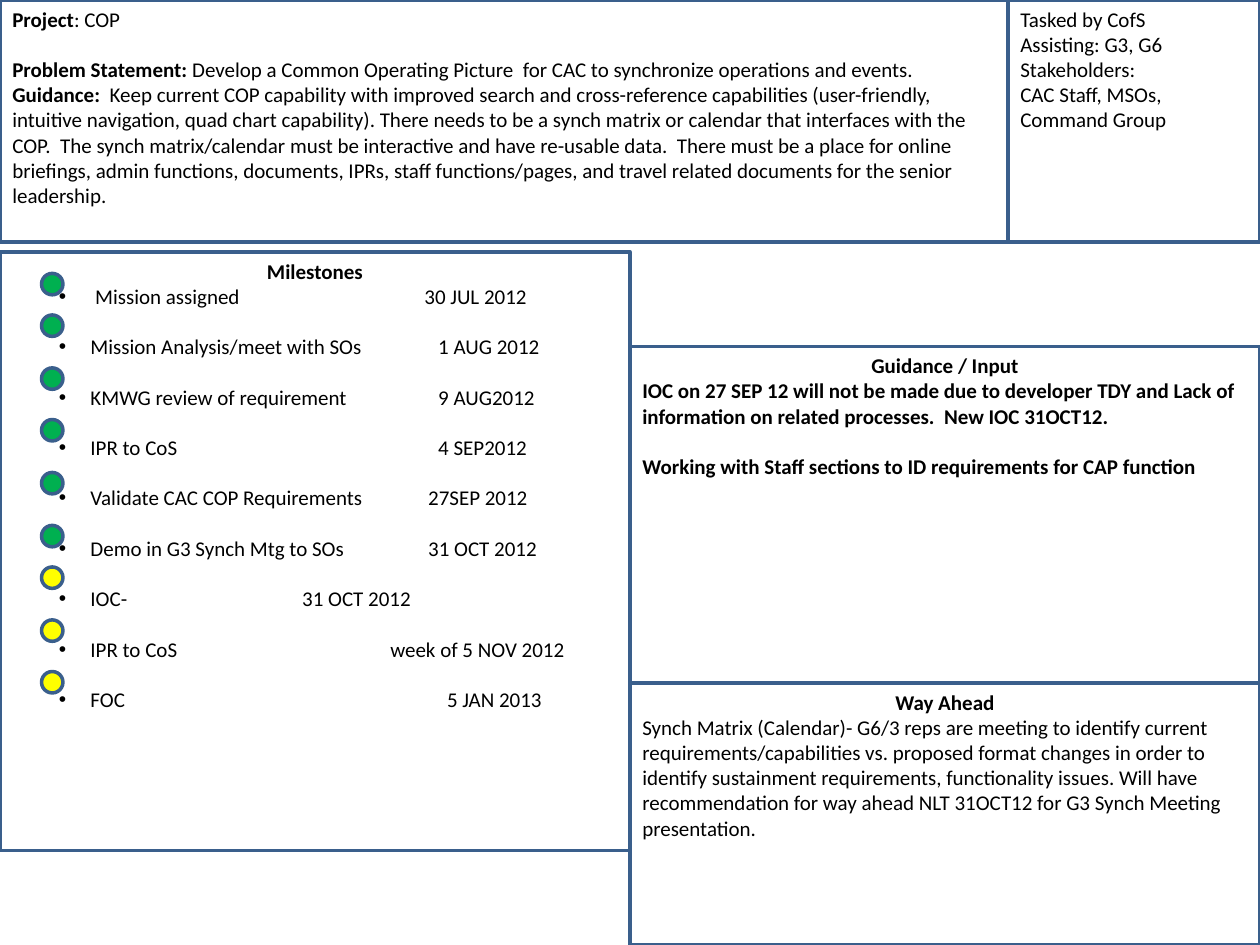
from lxml.etree import SubElement
from pptx import Presentation
from pptx.dml.color import RGBColor
from pptx.enum.shapes import MSO_SHAPE as Shape
from pptx.enum.text import MSO_ANCHOR as Anchor, PP_ALIGN as Align
from pptx.oxml.ns import qn
from pptx.util import Inches, Pt

BLACK = RGBColor(0x00, 0x00, 0x00)
BLUE = RGBColor(0x3A, 0x5F, 0x8C)
GREEN = RGBColor(0x00, 0xB0, 0x50)
YELLOW = RGBColor(0xFF, 0xFF, 0x00)

FONT = {"name": "Calibri", "size": Pt(12)}
LINE_GAP = Pt(14.4)
STATUS_LEFT, STATUS_SIZE = 0.33, 0.17
BULLET_MARGIN, BULLET_HANG = 0.62, 0.25

PROJECT = [
    [("Project", True), (": COP", False)],
    [
        ("Problem Statement: ", True),
        ("Develop a Common Operating Picture  for CAC to synchronize "
         "operations and events.", False),
    ],
    [
        ("Guidance:  ", True),
        ("Keep current COP capability with improved search and cross-reference "
         "capabilities (user-friendly, intuitive navigation, quad chart capability). "
         "There needs to be a synch matrix or calendar that interfaces with the COP.  "
         "The synch matrix/calendar must be interactive and have re-usable data.  "
         "There must be a place for online briefings, admin functions, documents, IPRs, "
         "staff functions/pages, and travel related documents for the senior leadership.",
         False),
    ],
]
TASKING = [
    "Tasked by CofS",
    "Assisting: G3, G6",
    "Stakeholders:",
    "CAC Staff, MSOs, Command Group",
]
MILESTONES = [
    (" Mission assigned", "30 JUL 2012", 3.27, 2.17, GREEN),
    ("Mission Analysis/meet with SOs", "1 AUG 2012", 3.38, 2.5, GREEN),
    ("KMWG review of requirement", "9 AUG2012", 3.38, 2.92, GREEN),
    ("IPR to CoS", "4 SEP2012", 3.38, 3.33, GREEN),
    ("Validate CAC COP Requirements", "27SEP 2012", 3.3, 3.75, GREEN),
    ("Demo in G3 Synch Mtg to SOs", "31 OCT 2012", 3.3, 4.17, GREEN),
    ("IOC-", "31 OCT 2012", 2.3, 4.5, YELLOW),
    ("IPR to CoS", "week of 5 NOV 2012", 3.0, 4.92, YELLOW),
    ("FOC", "5 JAN 2013", 3.45, 5.33, YELLOW),
]
GUIDANCE = [
    "IOC on 27 SEP 12 will not be made due to developer TDY and Lack of information "
    "on related processes.  New IOC 31OCT12.",
    "Working with Staff sections to ID requirements for CAP function",
]
WAY_AHEAD = (
    "Synch Matrix (Calendar)- G6/3 reps are meeting to identify current "
    "requirements/capabilities vs. proposed format changes in order to identify "
    "sustainment requirements, functionality issues. Will have recommendation for way "
    "ahead NLT 31OCT12 for G3 Synch Meeting presentation."
)


def set_all(target, values):
    for name, value in values.items():
        setattr(target, name, value)


def add_outlined(page, kind, left, top, width, height):
    shape = page.shapes.add_shape(
        kind, Inches(left), Inches(top), Inches(width), Inches(height))
    shape.shadow.inherit = False
    shape.line.color.rgb = BLUE
    shape.line.width = Pt(2)
    return shape


def add_panel(page, left, top, width, height):
    panel = add_outlined(page, Shape.RECTANGLE, left, top, width, height)
    panel.fill.background()
    set_all(panel.text_frame, {"word_wrap": True, "vertical_anchor": Anchor.TOP})
    return panel.text_frame


def add_para(box, spans, align=Align.LEFT, gap=Pt(0)):
    first = box.paragraphs[0]
    para = box.add_paragraph() if first.runs else first
    set_all(para, {"alignment": align, "space_before": gap})
    for text, bold in spans:
        span = para.add_run()
        span.text = text
        set_all(span.font, {**FONT, "bold": bold})
        span.font.color.rgb = BLACK
    return para


def add_heading(box, text):
    add_para(box, [(text, True)], Align.CENTER)


def add_milestone(box, task, date, date_left, gap):
    para = add_para(box, [(f"{task}\t{date}", False)], gap=gap)
    props = para._p.get_or_add_pPr()
    props.set("marL", str(Inches(BULLET_MARGIN)))
    props.set("indent", str(-Inches(BULLET_HANG)))
    SubElement(props, qn("a:buFont"), typeface="Arial")
    SubElement(props, qn("a:buChar"), char="•")
    stops = SubElement(props, qn("a:tabLst"))
    SubElement(stops, qn("a:tab"), pos=str(Inches(date_left)), algn="l")


def add_status(page, top, color):
    status = add_outlined(
        page, Shape.OVAL, STATUS_LEFT, top, STATUS_SIZE, STATUS_SIZE)
    status.fill.solid()
    status.fill.fore_color.rgb = color


def main():
    deck = Presentation()
    set_all(deck, {"slide_width": Inches(10), "slide_height": Inches(7.5)})
    page = deck.slides.add_slide(deck.slide_layouts[6])

    project = add_panel(page, 0, 0, 8, 1.92)
    for spans, gap in zip(PROJECT, (Pt(0), LINE_GAP, Pt(0))):
        add_para(project, spans, gap=gap)

    tasking = add_panel(page, 8, 0, 2, 1.92)
    for text in TASKING:
        add_para(tasking, [(text, False)])

    milestones = add_panel(page, 0, 2, 5, 4.75)
    add_heading(milestones, "Milestones")
    for index, (task, date, date_left, top, color) in enumerate(MILESTONES):
        add_milestone(milestones, task, date, date_left, LINE_GAP if index else Pt(0))
        add_status(page, top, color)

    guidance = add_panel(page, 5, 2.75, 5, 2.67)
    add_heading(guidance, "Guidance / Input")
    for text, gap in zip(GUIDANCE, (Pt(0), LINE_GAP)):
        add_para(guidance, [(text, True)], gap=gap)

    way_ahead = add_panel(page, 5, 5.42, 5, 2.08)
    add_heading(way_ahead, "Way Ahead")
    add_para(way_ahead, [(WAY_AHEAD, False)])

    deck.save("out.pptx")


if __name__ == "__main__":
    main()
